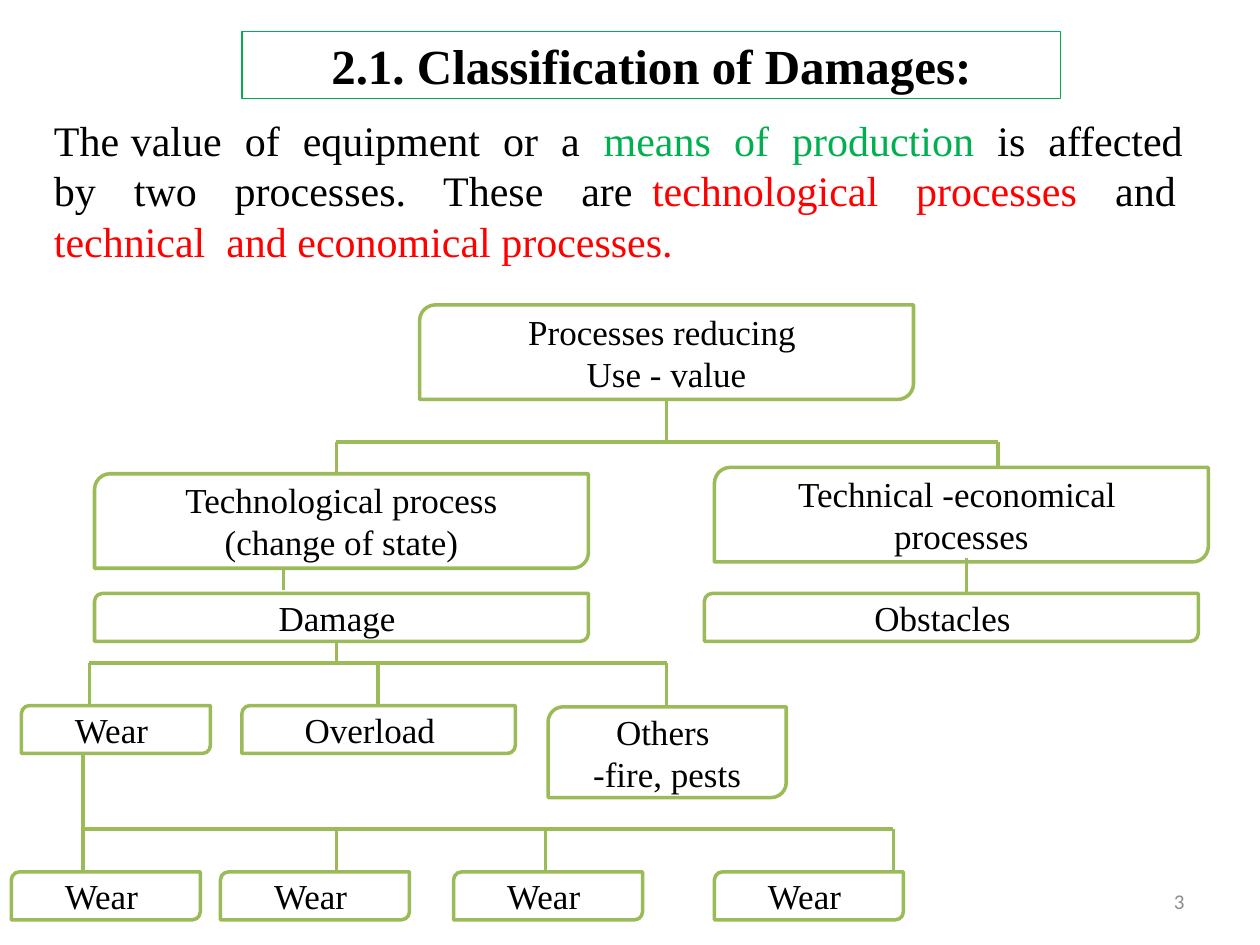
from lxml import etree
from pptx import Presentation
from pptx.dml.color import RGBColor
from pptx.enum.shapes import MSO_CONNECTOR, MSO_SHAPE
from pptx.enum.text import MSO_ANCHOR, PP_ALIGN
from pptx.oxml.ns import qn
from pptx.util import Inches, Pt

RECT, BOX = MSO_SHAPE.RECTANGLE, MSO_SHAPE.ROUND_2_DIAG_RECTANGLE
STRAIGHT = MSO_CONNECTOR.STRAIGHT
TOP, MIDDLE = MSO_ANCHOR.TOP, MSO_ANCHOR.MIDDLE
CENTER, RIGHT, JUSTIFY = PP_ALIGN.CENTER, PP_ALIGN.RIGHT, PP_ALIGN.JUSTIFY

BLACK = RGBColor(0, 0, 0)
WHITE = RGBColor(255, 255, 255)
GREEN = RGBColor(0x00, 0xB0, 0x50)
RED = RGBColor(255, 0, 0)
OLIVE = RGBColor(0x9B, 0xBB, 0x59)
GRAY = RGBColor(0x8C, 0x8C, 0x8C)
SERIF, SANS = "Times New Roman", "Calibri"

# Content
TITLE = "2.1. Classification of Damages:"
INTRO = [
    ("The value  of  equipment  or  a  ", BLACK),
    ("means  of  production", GREEN),
    ("  is  affected  by  two  processes.  These  are ", BLACK),
    ("technological  processes  ", RED),
    ("and  ", BLACK),
    ("technical  and economical processes.", RED),
]
PAGE = "3"

# Box sizes and row tops, in inches
WIDE, NARROW = 3.92, 1.5
TALL, LOW = 0.75, 0.38
PROCESS, STATE, KIND, WEAR = 3.76, 4.71, 5.6, 6.92

# Boxes: lines, left, top, width, height
BOXES = [
    (["Processes reducing ", "Use - value"], 3.33, 2.42, WIDE, TALL),
    (["Technological process", "(change of state)"], 0.75, PROCESS, WIDE, TALL),
    (["Technical -economical ", "processes"], 5.67, 3.71, WIDE, TALL),
    (["Damage "], 0.75, STATE, WIDE, LOW),
    (["Obstacles  "], 5.59, STATE, WIDE, LOW),
    (["Wear "], 0.17, KIND, NARROW, LOW),
    (["Overload  "], 1.92, KIND, 2.17, LOW),
    (["Others ", "-fire, pests"], 4.35, 5.61, 1.89, 0.72),
]
BOXES += [(["Wear "], x, WEAR, NARROW, LOW) for x in (0.09, 1.75, 3.6, 5.67)]

# Branches: stem x, stem top, bar y, drops as (x, bottom)
BRANCHES = [
    (5.29, 3.17, 3.51, [(2.67, PROCESS), (7.92, 3.71)]),
    (2.67, 5.09, 5.26, [(x, KIND) for x in (0.71, 3, 5.29)]),
    (0.66, 5.98, 6.58, [(x, WEAR) for x in (0.66, 2.67, 4.33, 7.09)]),
]
# Single links: x, top, bottom
LINKS = [(2.25, 4.51, 4.68), (7.67, 4.43, STATE)]

prs = Presentation()
prs.slide_width, prs.slide_height = Inches(10), Inches(7.5)
s = prs.slides.add_slide(prs.slide_layouts[6])


def add_text(sp, paragraphs, size, align, anchor=MIDDLE, font=SERIF, bold=False):
    """Fill sp with paragraphs, each a list of (text, colour) runs."""
    tf = sp.text_frame
    tf.word_wrap, tf.vertical_anchor = True, anchor
    for i, runs in enumerate(paragraphs):
        p = tf.paragraphs[0] if i == 0 else tf.add_paragraph()
        p.alignment = align
        p.font.name, p.font.size, p.font.bold = font, Pt(size), bold
        for text, color in runs:
            r = p.add_run()
            r.text = text
            r.font.color.rgb = color


def add_box(kind, x, y, w, h, color, width):
    sp = s.shapes.add_shape(kind, Inches(x), Inches(y), Inches(w), Inches(h))
    sp.shadow.inherit = False
    sp.fill.solid()
    sp.fill.fore_color.rgb = WHITE
    sp.line.color.rgb, sp.line.width = color, Pt(width)
    return sp


def add_textbox(x, y, w, h):
    return s.shapes.add_textbox(Inches(x), Inches(y), Inches(w), Inches(h))


def add_line(x1, y1, x2, y2):
    c = s.shapes.add_connector(STRAIGHT, Inches(x1), Inches(y1), Inches(x2), Inches(y2))
    c.line.color.rgb, c.line.width = OLIVE, Pt(2)
    etree.SubElement(c._element.spPr, qn("a:effectLst"))


# Title and introduction
add_text(add_box(RECT, 1.92, 0.25, 6.5, 0.53, GREEN, 0.75),
         [[(TITLE, BLACK)]], 28, CENTER, bold=True)
intro = add_textbox(0.33, 0.86, 9.25, 1.4)
add_text(intro, [INTRO], 24, JUSTIFY, TOP)

# Tree boxes
for lines, x, y, w, h in BOXES:
    add_text(add_box(BOX, x, y, w, h, OLIVE, 2),
             [[(line, BLACK)] for line in lines], 20, CENTER)

# Tree lines
for x, top, bar, drops in BRANCHES:
    add_line(x, top, x, bar)
    add_line(drops[0][0], bar, drops[-1][0], bar)
    for drop_x, bottom in drops:
        add_line(drop_x, bar, drop_x, bottom)
for x, top, bottom in LINKS:
    add_line(x, top, x, bottom)

# Page number
add_text(add_textbox(7.17, 6.95, 2.33, 0.4), [[(PAGE, GRAY)]], 12, RIGHT, font=SANS)

prs.save("out.pptx")
